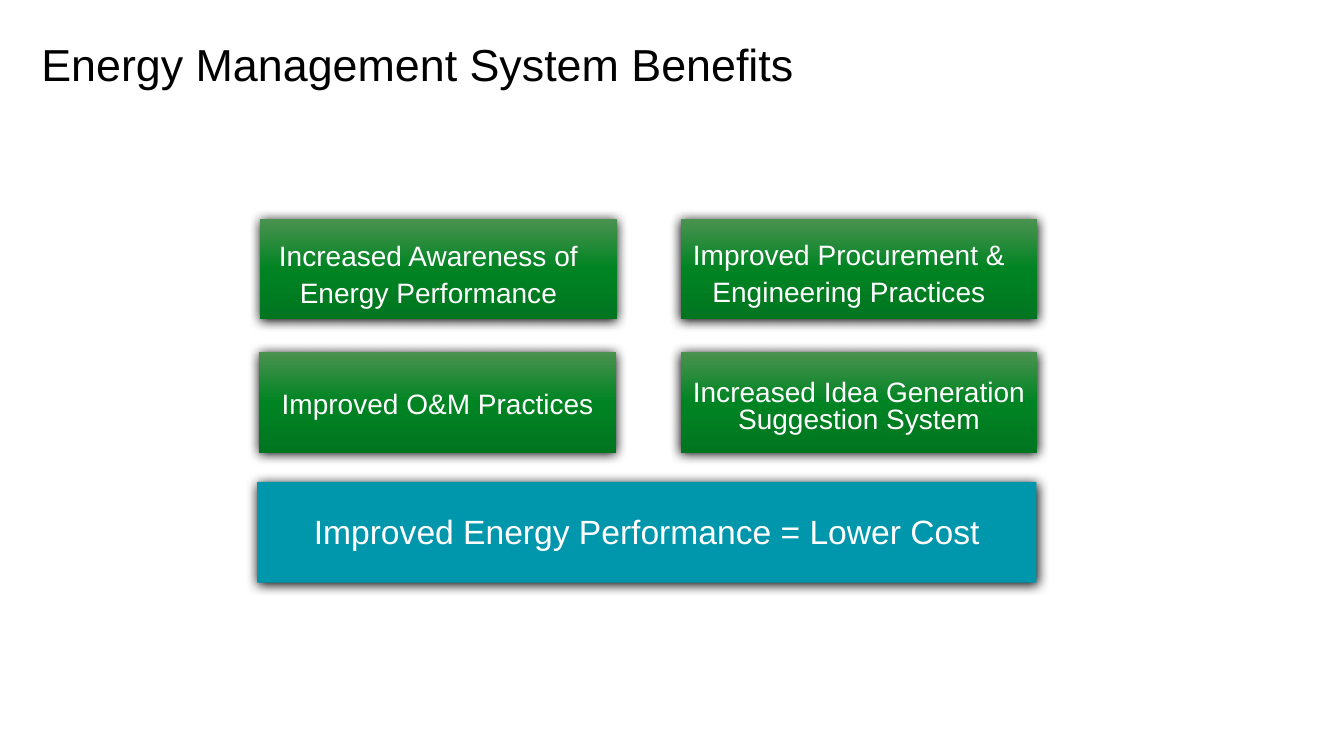
from copy import deepcopy

from lxml import etree
from pptx import Presentation, util as u
from pptx.dml.color import RGBColor
from pptx.enum import shapes, text
from pptx.oxml.ns import qn

WHITE = RGBColor(0xFF, 0xFF, 0xFF)
BLACK = RGBColor(0, 0, 0)
TEAL = RGBColor(0x00, 0x96, 0xAC)
GREENS = [
    (0, RGBColor(0x4B, 0x92, 0x50)),
    (0.5, RGBColor(0x00, 0x84, 0x23)),
    (1, RGBColor(0x00, 0x75, 0x1F)),
]
TOP, BOTTOM = text.MSO_ANCHOR.TOP, text.MSO_ANCHOR.BOTTOM
LEFT, CENTER = text.PP_ALIGN.LEFT, text.PP_ALIGN.CENTER
WIDE, HIGH = 3.54, 1
COL, UPPER, LOWER = 6.75, 2.17, 3.49


class Deck:
    font = "Arial"

    def __init__(self):
        self.show = Presentation()
        self.show.slide_width = u.Inches(13.33)
        self.show.slide_height = u.Inches(7.5)
        self.slide = self.show.slides.add_slide(self.show.slide_layouts[6])

    def panel(self, left, top, width, color=None):
        """Draw a shadowed bar, green gradient unless a color is given."""
        box = self.slide.shapes.add_shape(
            shapes.MSO_SHAPE.RECTANGLE,
            *map(u.Inches, (left, top, width, HIGH)))
        box.line.fill.background()
        if color is None:
            self.shade(box)
        else:
            box.fill.solid()
            box.fill.fore_color.rgb = color
        self.shadow(box)

    def shade(self, box):
        """Fill with the green gradient, running downward."""
        box.fill.gradient()
        stops = box._element.spPr.find(".//" + qn("a:gsLst"))
        stops.append(deepcopy(stops[-1]))
        for stop, (place, color) in zip(box.fill.gradient_stops, GREENS):
            stop.position = place
            stop.color.rgb = color
        box.fill.gradient_angle = 270

    def shadow(self, box):
        box.shadow.inherit = False
        effects = box._element.spPr.find(qn("a:effectLst"))
        outer = etree.SubElement(
            effects, qn("a:outerShdw"), blurRad=str(u.Pt(8.5)),
            dist=str(u.Pt(1)), dir="5400000", algn="ctr", rotWithShape="0")
        etree.SubElement(outer, qn("a:srgbClr"), val=str(BLACK))

    def label(self, words, area, size=20, color=WHITE, anchor=BOTTOM,
              align=CENTER, inset=(0.1, 0.05, 0.1, 0.05),
              lines=0.8, before=0, after=0):
        box = self.slide.shapes.add_textbox(*map(u.Inches, area))
        frame = box.text_frame
        frame.word_wrap = True
        frame.vertical_anchor = anchor
        (frame.margin_left, frame.margin_top,
         frame.margin_right, frame.margin_bottom) = map(u.Inches, inset)
        para = frame.paragraphs[0]
        para.text = words
        para.alignment = align
        para.line_spacing = lines
        para.space_before = u.Pt(before)
        para.space_after = u.Pt(after)
        para.font.name = self.font
        para.font.size = u.Pt(size)
        para.font.color.rgb = color


def main():
    deck = Deck()
    deck.panel(2.55, 4.78, 7.73, TEAL)
    for left, top in [(COL, LOWER), (2.57, LOWER), (2.58, UPPER), (COL, UPPER)]:
        deck.panel(left, top, WIDE)

    upper = dict(inset=(0, 0, 0.2, 0), lines=1.1, after=6)
    deck.label("Increased Awareness of Energy Performance",
               (2.58, 2.32, WIDE, 0.75), **upper)
    deck.label("Improved Procurement & Engineering Practices",
               (COL, 2.26, WIDE, 0.8), **upper)
    deck.label("Improved Energy Performance = Lower Cost",
               (2.55, 5.1, 7.73, 0.42), size=24, anchor=TOP)
    deck.label("Increased Idea Generation Suggestion System",
               (COL, LOWER, WIDE, 0.87), before=10)
    deck.label("Improved O&M Practices", (2.57, 3.59, WIDE, 0.63), before=10)
    deck.label("Energy Management System Benefits",
               (0.41, 0.42, 12.49, 0.9), size=32, color=BLACK, anchor=TOP,
               align=LEFT, inset=(0, 0, 0, 0), lines=0.9)
    deck.show.save("out.pptx")


if __name__ == "__main__":
    main()
